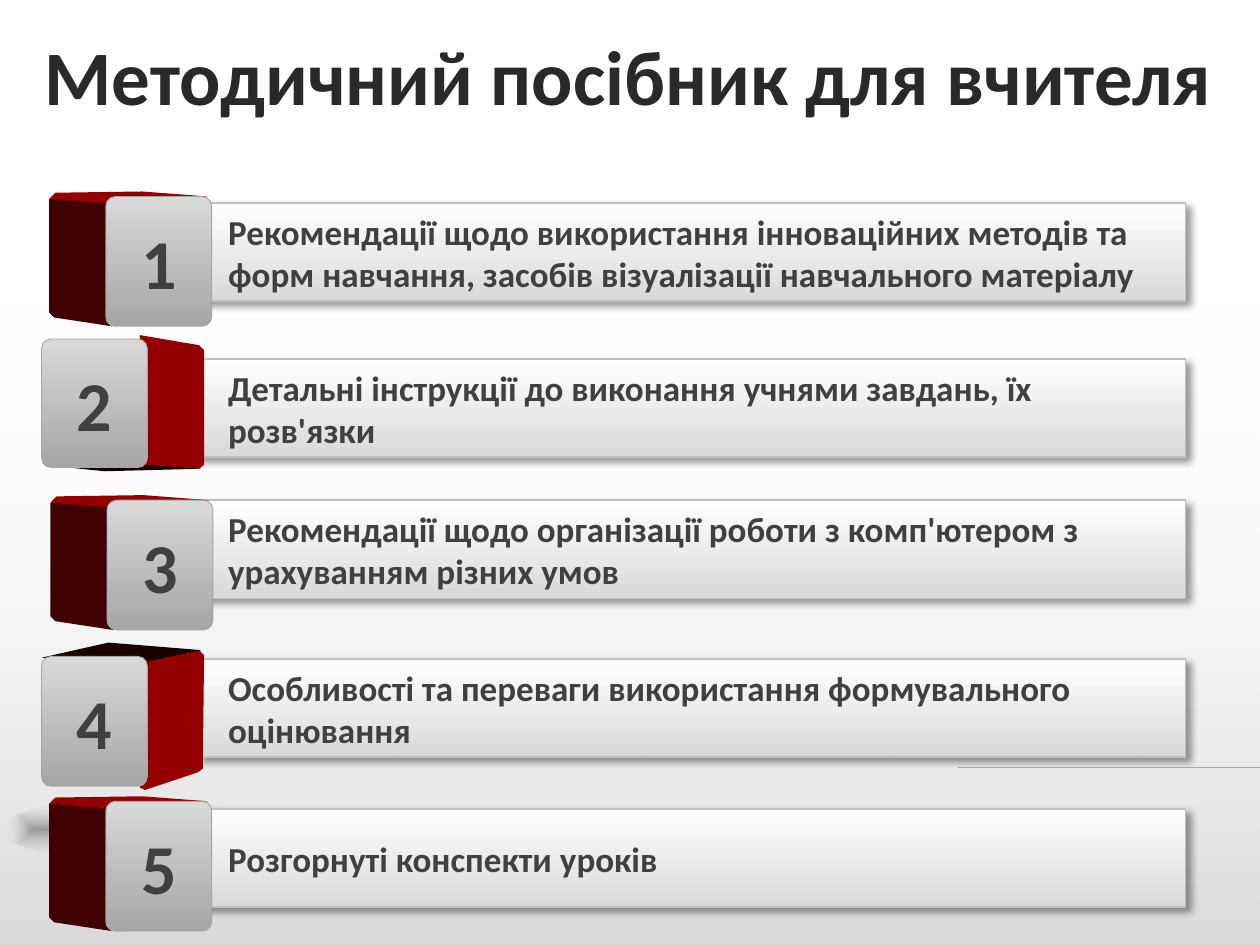
from lxml import etree
from pptx import Presentation
from pptx.dml.color import RGBColor
from pptx.enum.shapes import MSO_CONNECTOR as LINK, MSO_SHAPE as SHAPE
from pptx.enum.text import MSO_ANCHOR as ANCHOR, PP_ALIGN as ALIGN
from pptx.oxml import parse_xml
from pptx.oxml.ns import qn
from pptx.util import Inches, Pt

FONT = "Calibri"
INK = RGBColor(0x29, 0x29, 0x29)
TEXT = RGBColor(0x40, 0x40, 0x40)
EDGE = RGBColor(0xC0, 0xC0, 0xC0)
GREY = RGBColor(0xA6, 0xA6, 0xA6)
RED = RGBColor(0x94, 0x00, 0x00)
DARK = RGBColor(0x40, 0x00, 0x00)
BLACK = RGBColor(0x18, 0x00, 0x00)

TITLE = "Методичний посібник для вчителя"

# Cube views: face box, then coloured sides, all relative to the cube's corner
LEFT = {
    "face": (0.45, 0.04, 0.84, 1.03),
    "sides": [
        (DARK, [(0, 0.06), (0.5, 0.06), (0.5, 1.07), (0.04, 1), (0, 0.96)]),
        (RED, [(0, 0.06), (0.05, 0.01), (0.74, 0), (1.26, 0.04), (0.5, 0.1)]),
    ],
}
RIGHT = {
    "face": (0, 0.03, 0.84, 1.02),
    "sides": [
        (RED, [(0.78, 0), (1.25, 0.08), (1.29, 0.12), (1.29, 1.03),
               (1.25, 1.06), (0.78, 1.05)]),
        (BLACK, [(0.02, 1.03), (0.5, 1.08), (1.27, 1.06), (0.84, 1.03)]),
    ],
}
LOW = {
    "face": (0, 0.11, 0.84, 1.03),
    "sides": [
        (RED, [(0.78, 0.12), (1.25, 0.06), (1.29, 0.1), (1.28, 1),
               (1.24, 1.03), (0.82, 1.17), (0.78, 1.15)]),
        (BLACK, [(0, 0.12), (0.53, 0), (1.27, 0.06), (0.84, 0.15)]),
    ],
}

# Bar top, cube corner, cube view, text
ITEMS = [
    (1.61, (0.39, 1.52), LEFT, "Рекомендації щодо використання інноваційних методів та "
     "форм навчання, засобів візуалізації навчального матеріалу"),
    (2.85, (0.33, 2.66), RIGHT,
     "Детальні інструкції до виконання учнями завдань, їх розв'язки"),
    (3.97, (0.4, 3.93), LEFT,
     "Рекомендації щодо організації роботи з комп'ютером з урахуванням різних умов"),
    (5.23, (0.33, 5.1), LOW,
     "Особливості та переваги використання формувального оцінювання"),
    (6.42, (0.39, 6.32), LEFT, "Розгорнуті конспекти уроків"),
]

NS = 'xmlns:a="http://schemas.openxmlformats.org/drawingml/2006/main"'
RADIAL = ('<a:path path="shape"><a:fillToRect l="50000" t="50000" '
          'r="50000" b="50000"/></a:path>')


def linear(angle):
    return f'<a:lin ang="{angle * 60000}" scaled="0"/>'


def shade(shape, start, end, way):
    """Gradient between two (hex, opacity in percent) stops."""
    stops = "".join(
        f'<a:gs pos="{pos}"><a:srgbClr val="{tone}">'
        f'<a:alpha val="{alpha * 1000}"/></a:srgbClr></a:gs>'
        for pos, (tone, alpha) in ((0, start), (100000, end)))
    shape.fill.background()
    props = shape._element.spPr
    props.replace(props.find(qn("a:noFill")), parse_xml(
        f'<a:gradFill {NS} rotWithShape="1"><a:gsLst>{stops}</a:gsLst>{way}</a:gradFill>'))


def add(kind, box, edge=None, width=1):
    shape = shapes.add_shape(kind, *map(Inches, box))
    shape.shadow.inherit = False
    if edge is None:
        shape.line.fill.background()
    else:
        shape.line.color.rgb = edge
        shape.line.width = Pt(width)
    return shape


def write(shape, text, size, color, align=ALIGN.LEFT, pad=(0, 0), wrap=True):
    frame = shape.text_frame
    frame.word_wrap = wrap
    frame.vertical_anchor = ANCHOR.MIDDLE
    frame.margin_left = frame.margin_right = Inches(pad[0])
    frame.margin_top = frame.margin_bottom = Inches(pad[1])
    para = frame.paragraphs[0]
    para.text = text
    para.alignment = align
    font = para.font
    font.name, font.size, font.bold = FONT, Pt(size), True
    font.color.rgb = color


def add_bar(top, text):
    bar = add(SHAPE.RECTANGLE, (1.57, top, 7.84, 0.78), EDGE)
    shade(bar, ("FFFFFF", 100), ("D9D9D9", 100), linear(90))
    bar._element.spPr.find(qn("a:effectLst")).append(parse_xml(
        f'<a:outerShdw {NS} blurRad="{Pt(4)}" dist="{Pt(3)}" dir="2700000" '
        'algn="tl" rotWithShape="0"><a:srgbClr val="000000">'
        '<a:alpha val="40000"/></a:srgbClr></a:outerShdw>'))
    write(bar, text, 20, TEXT, pad=(0.24, 0.04))


def add_cube(corner, view, label):
    x, y = corner
    for color, points in view["sides"]:
        spots = [(Inches(x + dx), Inches(y + dy)) for dx, dy in points]
        pen = shapes.build_freeform(*spots[0])
        pen.add_line_segments(spots[1:])
        side = pen.convert_to_shape()
        side.shadow.inherit = False
        side.fill.solid()
        side.fill.fore_color.rgb = color
        side.line.fill.background()
    dx, dy, wide, high = view["face"]
    face = add(SHAPE.ROUNDED_RECTANGLE, (x + dx, y + dy, wide, high), GREY, 0.5)
    face.adjustments[0] = 0.09
    shade(face, ("D9D9D9", 100), ("A6A6A6", 100), linear(90))
    write(face, label, 40, TEXT, ALIGN.CENTER)


deck = Presentation()
deck.slide_width, deck.slide_height = Inches(10), Inches(7.5)
shapes = deck.slides.add_slide(deck.slide_layouts[6]).shapes

# Backdrop
floor = add(SHAPE.RECTANGLE, (0, 2.21, 10, 5.29))
shade(floor, ("000000", 15), ("FFFFFF", 0), linear(270))
glow = add(SHAPE.OVAL, (0.02, 6.34, 2.02, 0.49))
shade(glow, ("000000", 34), ("FFFFFF", 0), RADIAL)

# Title
title = shapes.add_textbox(*map(Inches, (0.35, 0.26, 9.29, 0.67)))
write(title, TITLE, 44, INK, wrap=False)

# Numbered bars
for number, (top, corner, view, text) in enumerate(ITEMS, 1):
    add_bar(top, text)
    add_cube(corner, view, str(number))

# Horizon line
rule = shapes.add_connector(LINK.STRAIGHT, Inches(7.6), Inches(6.09), Inches(10), Inches(6.09))
rule.line.color.rgb = GREY
rule.line.width = Pt(0.75)
etree.SubElement(rule._element.spPr, qn("a:effectLst"))

deck.save("out.pptx")
